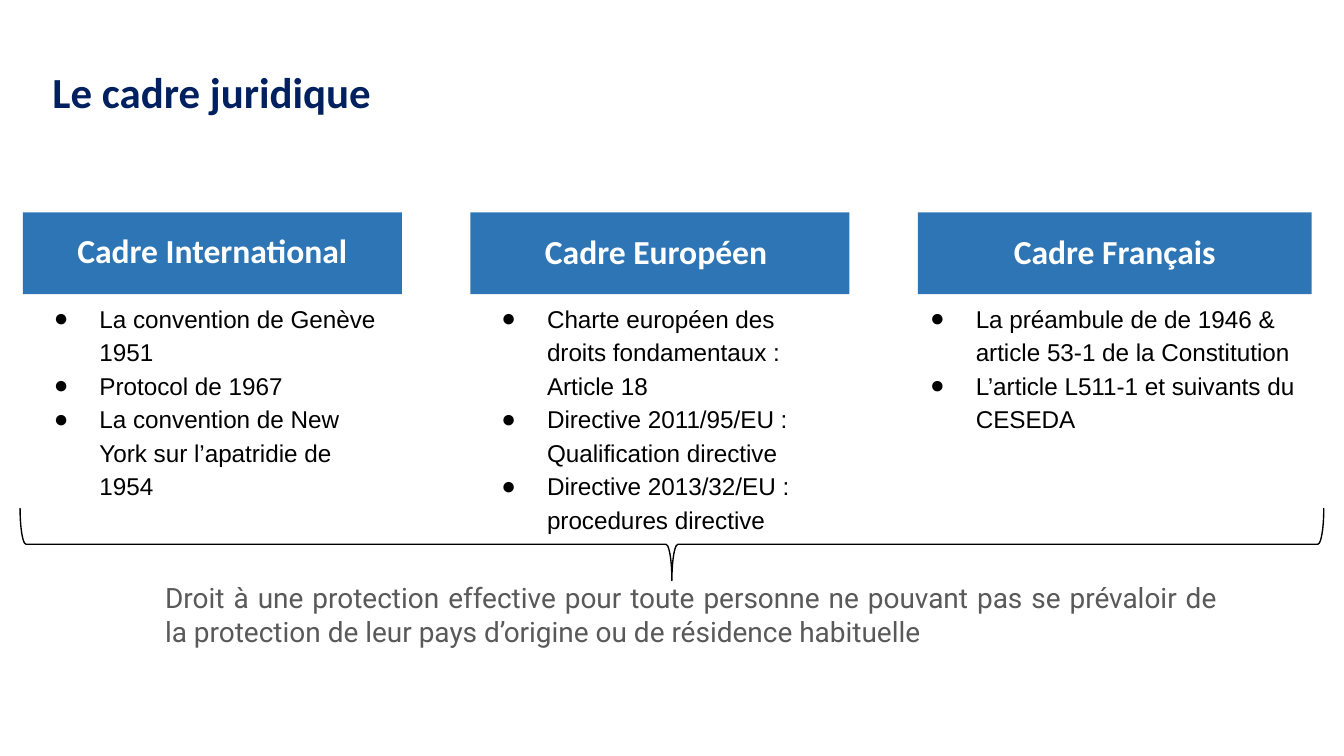
"""Build the slide on the legal framework of asylum."""
from lxml import etree
from pptx import Presentation
from pptx import util as u
from pptx.dml.color import RGBColor
from pptx.enum import shapes, text
from pptx.oxml.ns import qn

HUES = {"navy": "002060", "blue": "2E75B5", "white": "FFFFFF",
        "black": "000000", "gray": "595959"}
COLS = [
    ("Cadre International", 0.8, 0.17, 2.82, 0.17, 2.8, 1.97,
     ["La convention de Genève 1951", "Protocol de 1967",
      "La convention de New York sur l’apatridie de 1954"]),
    ("Cadre Européen ", 0.9, 3.5, 2.82, 3.5, 2.82, 1.14,
     ["Charte européen des droits fondamentaux : Article 18",
      "Directive 2011/95/EU : Qualification directive",
      "Directive 2013/32/EU : procedures directive"]),
    ("Cadre Français", 0.9, 6.83, 2.93, 6.69, 3.22, 2.47,
     ["La préambule de de 1946 & article 53-1 de la Constitution",
      "L’article L511-1 et suivants du CESEDA"]),
]


class Deck:
    def __init__(self):
        self.prs = Presentation()
        self.prs.slide_width = u.Inches(10)
        self.prs.slide_height = u.Inches(10 * 9 / 16)
        self.slide = self.prs.slides.add_slide(self.prs.slide_layouts[4])
        self.holes = self.slide.placeholders

    def hue(self, name):
        return RGBColor.from_string(HUES[name])

    def place(self, shape, box):
        shape.left, shape.top, shape.width, shape.height = map(u.Inches, box)

    def frame(self, shape, anchor, side=0.07, edge=0.04):
        frame = shape.text_frame
        frame.word_wrap = True
        frame.auto_size = text.MSO_AUTO_SIZE.NONE
        frame.vertical_anchor = anchor
        frame.margin_left = frame.margin_right = u.Inches(side)
        frame.margin_top = frame.margin_bottom = u.Inches(edge)
        return frame

    def style(self, para, face, size, hue, bold=False, gap=1.0,
              align=text.PP_ALIGN.LEFT):
        para.alignment = align
        para.line_spacing = gap
        para.space_before = para.space_after = u.Pt(0)
        font = para.font
        font.name, font.size, font.bold = face, u.Pt(size), bold
        font.color.rgb = self.hue(hue)

    def title(self, words, box):
        shape = self.slide.shapes.title
        self.place(shape, box)
        frame = self.frame(shape, text.MSO_ANCHOR.MIDDLE)
        frame.text = words
        self.style(frame.paragraphs[0], "Calibri", 23, "navy", True, 0.9)

    def bullet(self, para):
        props = para._p.get_or_add_pPr()
        props.set("marL", str(u.Inches(0.5)))
        props.set("indent", str(u.Inches(-0.34)))
        tint = etree.SubElement(props, qn("a:buClr"))
        etree.SubElement(tint, qn("a:srgbClr"), val=HUES["black"])
        etree.SubElement(props, qn("a:buChar"), char="●")

    def points(self, idx, items, box):
        shape = self.holes[idx]
        self.place(shape, box)
        frame = self.frame(shape, text.MSO_ANCHOR.TOP)
        frame.text = "\n".join(items)
        for para in frame.paragraphs:
            self.bullet(para)
            self.style(para, "Arial", 13, "black", gap=1.15)

    def shape(self, kind, box):
        shape = self.slide.shapes.add_shape(kind, *map(u.Inches, box))
        shape.shadow.inherit = False
        return shape

    def head(self, words, gap, box):
        shape = self.shape(shapes.MSO_SHAPE.RECTANGLE, box)
        shape.fill.solid()
        shape.fill.fore_color.rgb = self.hue("blue")
        shape.line.fill.background()
        frame = self.frame(shape, text.MSO_ANCHOR.MIDDLE)
        frame.text = words
        self.style(frame.paragraphs[0], "Calibri", 18, "white", True, gap,
                   text.PP_ALIGN.CENTER)

    def brace(self, box):
        shape = self.shape(shapes.MSO_SHAPE.LEFT_BRACE, box)
        shape.rotation = 270
        shape.adjustments[0] = 0.083
        shape.fill.background()
        shape.line.color.rgb = self.hue("black")
        shape.line.width = u.Pt(0.75)

    def note(self, words, box):
        shape = self.slide.shapes.add_textbox(*map(u.Inches, box))
        frame = self.frame(shape, text.MSO_ANCHOR.TOP, 0.1, 0.1)
        frame.text = words
        self.style(frame.paragraphs[0], "Roboto", 15, "gray",
                   align=text.PP_ALIGN.JUSTIFY)

    def save(self):
        for hole in list(self.holes):
            if not hole.text_frame.text:
                hole.element.getparent().remove(hole.element)
        self.prs.save("out.pptx")


def main():
    deck = Deck()
    deck.title("Le cadre juridique", (0.32, 0.16, 8.62, 1.09))
    for idx, col in zip((2, 4, 1), COLS):
        name, gap, left, width, inner, span, tall, items = col
        deck.points(idx, items, (inner, 2.19, span, tall))
        deck.head(name, gap, (left, 1.58, width, 0.61))
    deck.brace((4.73, -0.8, 0.54, 9.7))
    deck.note("Droit à une protection effective pour toute personne ne pouvant "
              "pas se prévaloir de la protection de leur pays d’origine ou de "
              "résidence habituelle", (1.13, 4.22, 8.03, 0.71))
    deck.save()


if __name__ == "__main__":
    main()
